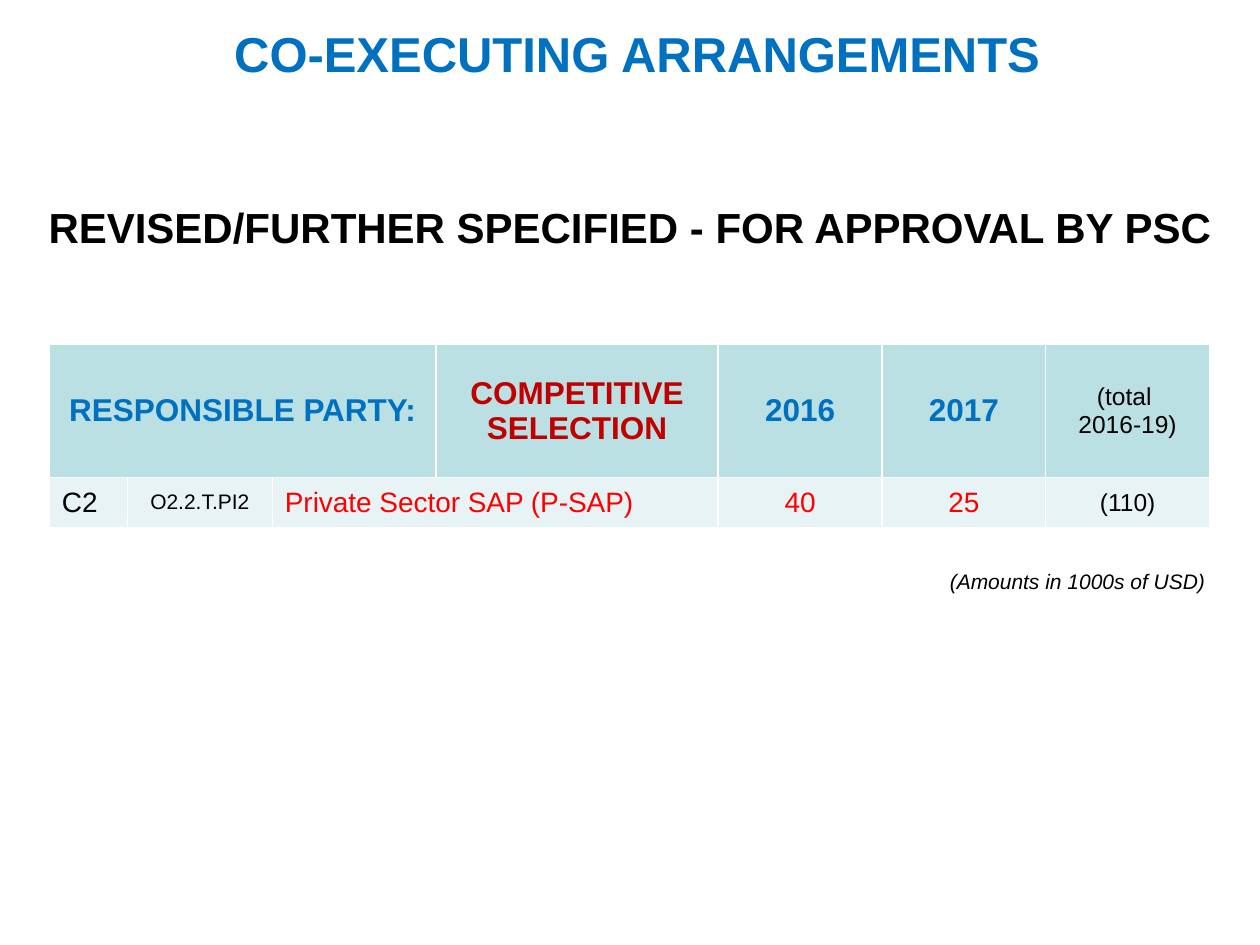
"""Build the co-executing arrangements slide with its budget table."""
import pptx
import pptx.dml.color
import pptx.enum.text
import pptx.util

Pt = pptx.util.Pt
Align = pptx.enum.text.PP_ALIGN
Anchor = pptx.enum.text.MSO_ANCHOR
Fit = pptx.enum.text.MSO_AUTO_SIZE
HUES = {"blue": "0070C0", "black": "000000", "crimson": "C00000",
        "red": "FF0000", "head": "BBE0E3", "body": "E7F3F4"}


def hue(name):
    return pptx.dml.color.RGBColor.from_string(HUES[name])


def write(frame, text, size, color, align=Align.CENTER, bold=False, italic=False):
    frame.text = text
    style = {"name": "Arial", "size": Pt(size), "bold": bold, "italic": italic}
    for para in frame.paragraphs:
        para.alignment = align
        for run in para.runs:
            for key, value in style.items():
                setattr(run.font, key, value)
            run.font.color.rgb = hue(color)


deck = pptx.Presentation()
deck.slide_width, deck.slide_height = Pt(720), Pt(540)
slide = deck.slides.add_slide(deck.slide_layouts[5])
shapes = slide.shapes

title = shapes.title
place = {"left": 116, "top": 9.4, "width": 496, "height": 41.2}
for key, value in place.items():
    setattr(title, key, Pt(value))
title.text_frame.auto_size = Fit.NONE
write(title.text_frame, "CO-EXECUTING ARRANGEMENTS", 28, "blue", bold=True)

labels = [
    ((8.6, 111.6, 702.8, 36.4), "REVISED/FURTHER SPECIFIED - FOR APPROVAL BY PSC",
     {"size": 24, "color": "black", "bold": True}),
    ((535.7, 321.1, 184.3, 21.8), "(Amounts in 1000s of USD)",
     {"size": 12, "color": "black", "align": Align.LEFT, "italic": True}),
]
for box, text, style in labels:
    frame = shapes.add_textbox(*map(Pt, box)).text_frame
    frame.word_wrap = True
    frame.auto_size = Fit.SHAPE_TO_FIT_TEXT
    write(frame, text, **style)

widths = [44.6, 82.8, 93.6, 161.2, 93.6, 93.6, 93.6]
heights = [76.2, 28.8]
grid = shapes.add_table(len(heights), len(widths), Pt(28.2), Pt(196.6),
                        Pt(sum(widths)), Pt(sum(heights))).table
for col, width in zip(grid.columns, widths):
    col.width = Pt(width)
for row, height, fill in zip(grid.rows, heights, ("head", "body")):
    row.height = Pt(height)
    for cell in row.cells:
        cell.fill.solid()
        cell.fill.fore_color.rgb = hue(fill)
        cell.vertical_anchor = Anchor.MIDDLE
grid.cell(0, 0).merge(grid.cell(0, 2))
grid.cell(1, 2).merge(grid.cell(1, 3))

cells = [
    (0, 0, "RESPONSIBLE PARTY:", 18, "blue", Align.CENTER, True),
    (0, 3, "COMPETITIVE SELECTION", 18, "crimson", Align.CENTER, True),
    (0, 4, "2016", 18, "blue", Align.CENTER, True),
    (0, 5, "2017", 18, "blue", Align.CENTER, True),
    (0, 6, "(total \n2016-19)", 14, "black"),
    (1, 0, "C2", 16, "black", Align.LEFT),
    (1, 1, "O2.2.T.PI2", 12, "black"),
    (1, 2, "Private Sector SAP (P-SAP)", 16, "red", Align.LEFT),
    (1, 4, "40", 16, "red"),
    (1, 5, "25", 16, "red"),
    (1, 6, "(110)", 14, "black"),
]
for row, col, *style in cells:
    write(grid.cell(row, col).text_frame, *style)

deck.save("out.pptx")
